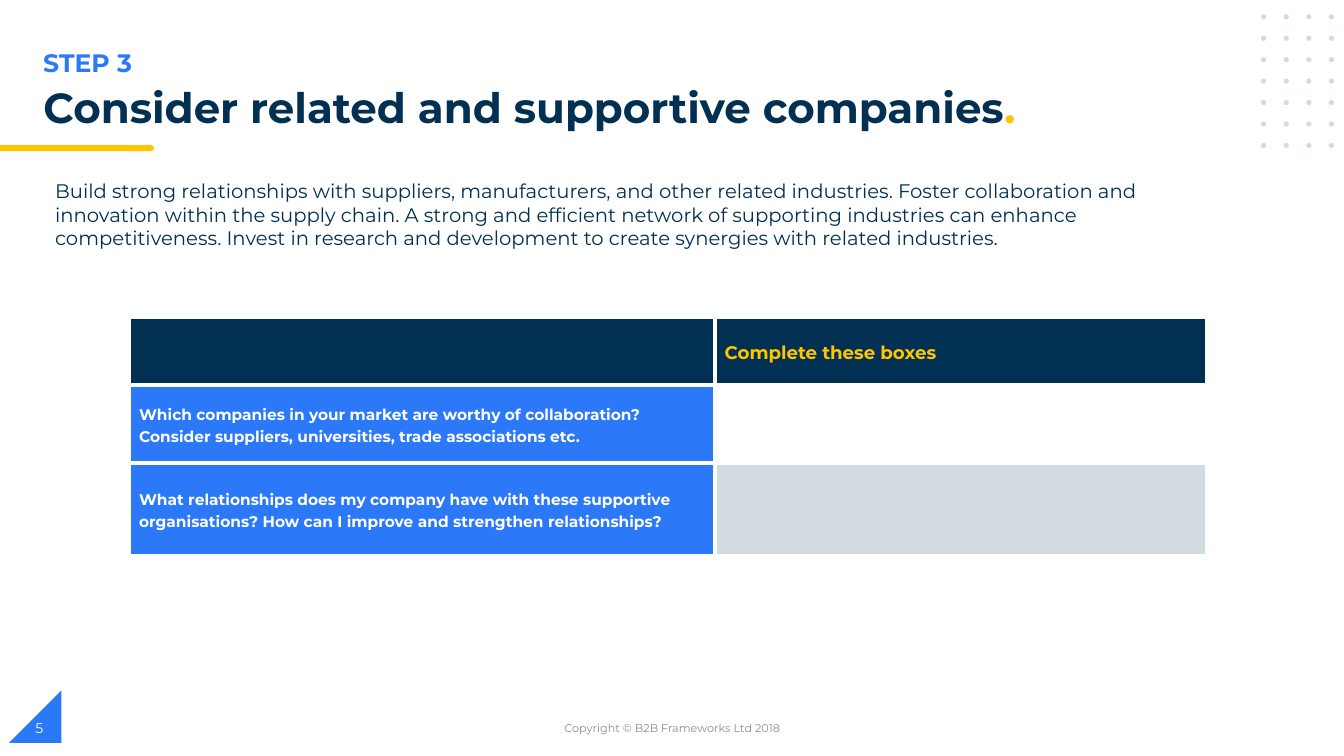
from lxml import etree
from pptx import Presentation
from pptx.dml.color import RGBColor
from pptx.enum.shapes import MSO_SHAPE
from pptx.enum.text import MSO_ANCHOR, MSO_AUTO_SIZE, PP_ALIGN
from pptx.oxml.ns import qn
from pptx.util import Cm, Pt

TOP, MIDDLE = MSO_ANCHOR.TOP, MSO_ANCHOR.MIDDLE
LEFT, CENTER = PP_ALIGN.LEFT, PP_ALIGN.CENTER
RECT, OVAL = MSO_SHAPE.RECTANGLE, MSO_SHAPE.OVAL
PILL, TRIANGLE = MSO_SHAPE.FLOWCHART_TERMINATOR, MSO_SHAPE.RIGHT_TRIANGLE

NAVY, BLUE, YELLOW = "023053", "2B79F8", "FFC600"
PALE, GREY, WHITE = "D1DBE0", "888C97", "FFFFFF"
FONT = "Montserrat"

# Content
TITLE = [("Consider related and supportive companies", NAVY), (".", YELLOW)]
STEP = "STEP 3"
INTRO = (
    "Build strong relationships with suppliers, manufacturers, and other related "
    "industries. Foster collaboration and innovation within the supply chain. A strong "
    "and efficient network of supporting industries can enhance competitiveness. Invest "
    "in research and development to create synergies with related industries."
)
COPYRIGHT = "Copyright © B2B Frameworks Ltd 2018"
PAGE = "5"

# Each cell: text, fill, text colour, text size
WORKSHEET = [
    [("", NAVY, WHITE, 13), ("Complete these boxes", NAVY, YELLOW, 13)],
    [("Which companies in your market are worthy of collaboration? "
      "Consider suppliers, universities, trade associations etc.", BLUE, WHITE, 11),
     ("", WHITE, NAVY, 11)],
    [("What relationships does my company have with these supportive "
      "organisations? How can I improve and strengthen relationships?", BLUE, WHITE, 11),
     ("", PALE, NAVY, 11)],
]
COLUMN_WIDTHS = [14.76, 12.4]
ROW_HEIGHTS = [1.73, 1.96, 2.34]

# Text boxes: text, place (cm), format, anchor, alignment
TEXTS = [
    (STEP, (0.84, 1.07, 17, 1.02), {"size": 18, "color": BLUE, "bold": True}, TOP, LEFT),
    (INTRO, (1.14, 4.39, 28.55, 2.06), {"size": 14, "color": NAVY}, TOP, LEFT),
    (COPYRIGHT, (11.23, 17.83, 11.43, 1.02), {"size": 8, "color": GREY}, MIDDLE, CENTER),
    (PAGE, (0.64, 17.83, 7.62, 1.02), {"size": 10, "color": WHITE}, MIDDLE, LEFT),
]

DOT_COLUMNS, DOT_ROWS = 4, 7
DOT_LEFT, DOT_TOP, DOT_SIZE = 31.78, 0.36, 0.13
DOT_STEP_X, DOT_STEP_Y = 0.57, 0.54


def rgb(value):
    return RGBColor.from_string(value)


def set_font(font, size, color, bold=False):
    for name, value in {"name": FONT, "size": Pt(size), "bold": bold}.items():
        setattr(font, name, value)
    font.color.rgb = rgb(color)


def add_filled(slide, preset, place, color):
    shape = slide.shapes.add_shape(preset, *map(Cm, place))
    shape.shadow.inherit = False
    shape.fill.solid()
    shape.fill.fore_color.rgb = rgb(color)
    shape.line.fill.background()
    return shape


def add_text(slide, text, place, style, anchor, align):
    frame = slide.shapes.add_textbox(*map(Cm, place)).text_frame
    frame.word_wrap = True
    frame.vertical_anchor = anchor
    paragraph = frame.paragraphs[0]
    paragraph.alignment = align
    run = paragraph.add_run()
    run.text = text
    set_font(run.font, **style)


def add_borders(cell, color, points):
    properties = cell._tc.get_or_add_tcPr()
    for side in ("a:lnL", "a:lnR", "a:lnT", "a:lnB"):
        line = etree.SubElement(properties, qn(side), w=str(Pt(points)))
        fill = etree.SubElement(line, qn("a:solidFill"))
        etree.SubElement(fill, qn("a:srgbClr"), val=color)


def add_title(slide):
    title = slide.shapes.title
    place = {"left": 0.84, "top": 2.08, "width": 29.44, "height": 1.42}
    for name, value in place.items():
        setattr(title, name, Cm(value))
    frame = title.text_frame
    frame.auto_size = MSO_AUTO_SIZE.NONE
    frame.vertical_anchor = TOP
    paragraph = frame.paragraphs[0]
    paragraph.alignment = LEFT
    paragraph.line_spacing = 0.9
    for text, color in TITLE:
        run = paragraph.add_run()
        run.text = text
        set_font(run.font, 30, color, True)


def add_worksheet(slide):
    table = slide.shapes.add_table(
        len(ROW_HEIGHTS), len(COLUMN_WIDTHS), Cm(3.25), Cm(7.98),
        Cm(sum(COLUMN_WIDTHS)), Cm(sum(ROW_HEIGHTS))).table
    table.horz_banding = False
    for column, width in zip(table.columns, COLUMN_WIDTHS):
        column.width = Cm(width)
    for row, height, contents in zip(table.rows, ROW_HEIGHTS, WORKSHEET):
        row.height = Cm(height)
        for cell, (text, fill, color, size) in zip(row.cells, contents):
            add_borders(cell, WHITE, 3)
            cell.fill.solid()
            cell.fill.fore_color.rgb = rgb(fill)
            cell.vertical_anchor = MIDDLE
            cell.margin_top = cell.margin_bottom = 0
            paragraph = cell.text_frame.paragraphs[0]
            paragraph.line_spacing = 1.15
            if text:
                run = paragraph.add_run()
                run.text = text
                set_font(run.font, size, color, True)


def main():
    deck = Presentation()
    deck.slide_width, deck.slide_height = Cm(33.87), Cm(19.05)
    slide = deck.slides.add_slide(deck.slide_layouts[5])

    # Corner triangle with its right angle at the bottom right
    corner = add_filled(slide, TRIANGLE, (0.23, 17.4, 1.32, 1.32), BLUE)
    corner._element.spPr.xfrm.set("flipH", "1")

    # Title underline with a rounded end
    add_filled(slide, PILL, (3.4, 3.66, 0.48, 0.15), YELLOW)
    add_filled(slide, RECT, (0, 3.66, 3.58, 0.15), YELLOW)

    # Dot grid
    for row in range(DOT_ROWS):
        for column in range(DOT_COLUMNS):
            place = (DOT_LEFT + column * DOT_STEP_X, DOT_TOP + row * DOT_STEP_Y,
                     DOT_SIZE, DOT_SIZE)
            add_filled(slide, OVAL, place, PALE)

    # Text and table
    add_title(slide)
    for entry in TEXTS:
        add_text(slide, *entry)
    add_worksheet(slide)

    deck.save("out.pptx")


if __name__ == "__main__":
    main()
